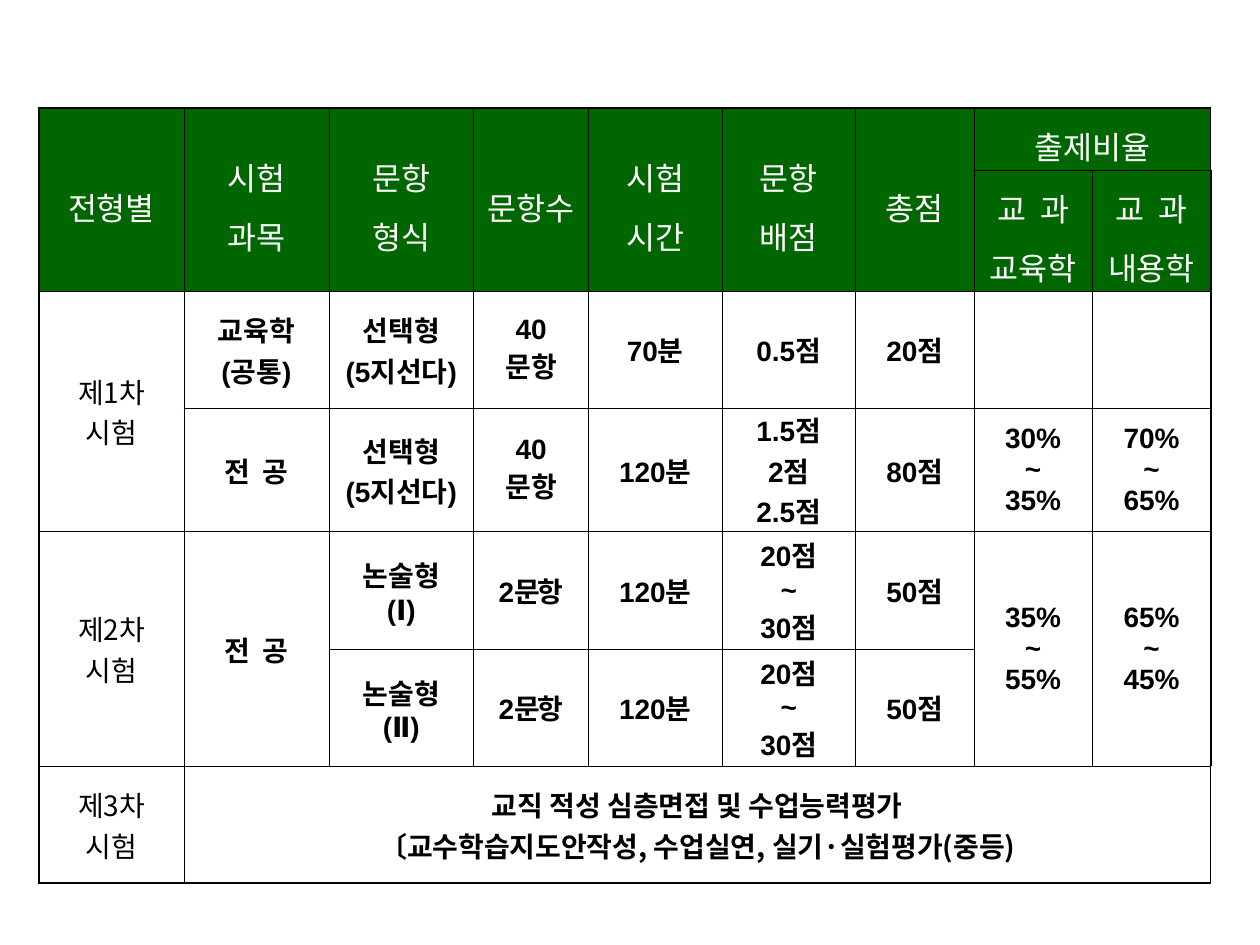
"""Build a slide with a table of the three exam stages."""
from lxml.etree import SubElement
from pptx import Presentation
from pptx.dml.color import RGBColor
from pptx.enum.text import MSO_ANCHOR, PP_ALIGN
from pptx.oxml.ns import qn
from pptx.util import Inches, Pt

COLORS = {"header": "006600", "body": "FFFFFF", "light": "FFFFFF",
          "dark": "000000", "border": "000000"}
KOREAN, LATIN = "Noto Sans CJK KR", "Arial"
HEADER_ROWS = 2
THIN, THICK = 0.43, 1.13
LEFT, TOP = 0.31, 0.86
COLS = [1.15] * 3 + [0.91] + [1.06] * 2 + [0.94] * 3
ROWS = [0.43, 0.59] + [0.93] * 5

ROW_TEXTS = [
    ["전형별", "시험\n과목", "문항\n형식", "문항수", "시험\n시간", "문항\n배점", "총점", "출제비율", ""],
    [""] * 7 + ["교\u00a0 과\n교육학", "교\u00a0 과\n내용학"],
    ["제1차\n시험", "교육학\n(공통)", "선택형\n(5지선다)", "40\n문항", "70분", "0.5점", "20점", "", ""],
    ["", "전\u00a0 공", "선택형\n(5지선다)", "40\n문항", "120분", "1.5점\n2점\n2.5점", "80점",
     "30%\n~\n35%", "70%\n~\n65%"],
    ["제2차\n시험", "전\u00a0 공", "논술형\n(Ⅰ)", "2문항", "120분", "20점\n~\n30점", "50점",
     "35%\n~\n55%", "65%\n~\n45%"],
    ["", "", "논술형\n(Ⅱ)", "2문항", "120분", "20점\n~\n30점", "50점", "", ""],
    ["제3차\n시험", "교직 적성 심층면접 및 수업능력평가\n〔교수학습지도안작성, 수업실연, 실기·실험평가(중등)"]
    + [""] * 7,
]
MERGES = [((0, c), (1, c)) for c in range(7)] + [
    ((0, 7), (0, 8)), ((2, 0), (3, 0)), ((4, 0), (5, 0)), ((4, 1), (5, 1)),
    ((4, 7), (5, 7)), ((4, 8), (5, 8)), ((6, 1), (6, 8)),
]


def rgb(name):
    return RGBColor.from_string(COLORS[name])


def set_borders(cell, row, col):
    outer = {"L": col == 0, "R": col == len(COLS) - 1,
             "T": row == 0, "B": row == len(ROWS) - 1}
    tc_pr = cell._tc.get_or_add_tcPr()
    for side, is_outer in outer.items():
        width = Pt(THICK if is_outer else THIN)
        ln = SubElement(tc_pr, qn(f"a:ln{side}"), w=str(int(width)))
        fill = SubElement(ln, qn("a:solidFill"))
        SubElement(fill, qn("a:srgbClr"), val=COLORS["border"])


def set_text(cell, text, row, col):
    header = row < HEADER_ROWS
    stage = col == 0
    last = row == len(ROWS) - 1
    cell.text_frame.text = text
    for p in cell.text_frame.paragraphs:
        p.alignment = PP_ALIGN.CENTER
        if header:
            p.line_spacing = 1.3
        for r in p.runs:
            r.font.size = Pt(18 if header else 16)
            r.font.bold = not (header or stage)
            r.font.color.rgb = rgb("light" if header else "dark")
            r.font.name = KOREAN if header or stage or last else LATIN
            r_pr = r._r.get_or_add_rPr()
            SubElement(r_pr, qn("a:ea"), typeface=KOREAN)
            if text == "2문항":
                r_pr.set("spc", "-120")


def format_cell(cell, text, row, col):
    cell.margin_left = cell.margin_right = Inches(0.01)
    cell.margin_top = cell.margin_bottom = Inches(0.01)
    cell.vertical_anchor = MSO_ANCHOR.MIDDLE
    set_borders(cell, row, col)
    cell.fill.solid()
    cell.fill.fore_color.rgb = rgb("header" if row < HEADER_ROWS else "body")
    if text:
        set_text(cell, text, row, col)


def main():
    prs = Presentation()
    prs.slide_width, prs.slide_height = Inches(10), Inches(7.5)
    s = prs.slides.add_slide(prs.slide_layouts[6])
    table = s.shapes.add_table(
        len(ROWS), len(COLS), Inches(LEFT), Inches(TOP),
        Inches(sum(COLS)), Inches(sum(ROWS))).table
    table.first_row = table.horz_banding = False
    for column, width in zip(table.columns, COLS):
        column.width = Inches(width)
    for table_row, height in zip(table.rows, ROWS):
        table_row.height = Inches(height)
    for row, texts in enumerate(ROW_TEXTS):
        for col, text in enumerate(texts):
            format_cell(table.cell(row, col), text, row, col)
    for first, last in MERGES:
        table.cell(*first).merge(table.cell(*last))
    prs.save("out.pptx")


if __name__ == "__main__":
    main()
